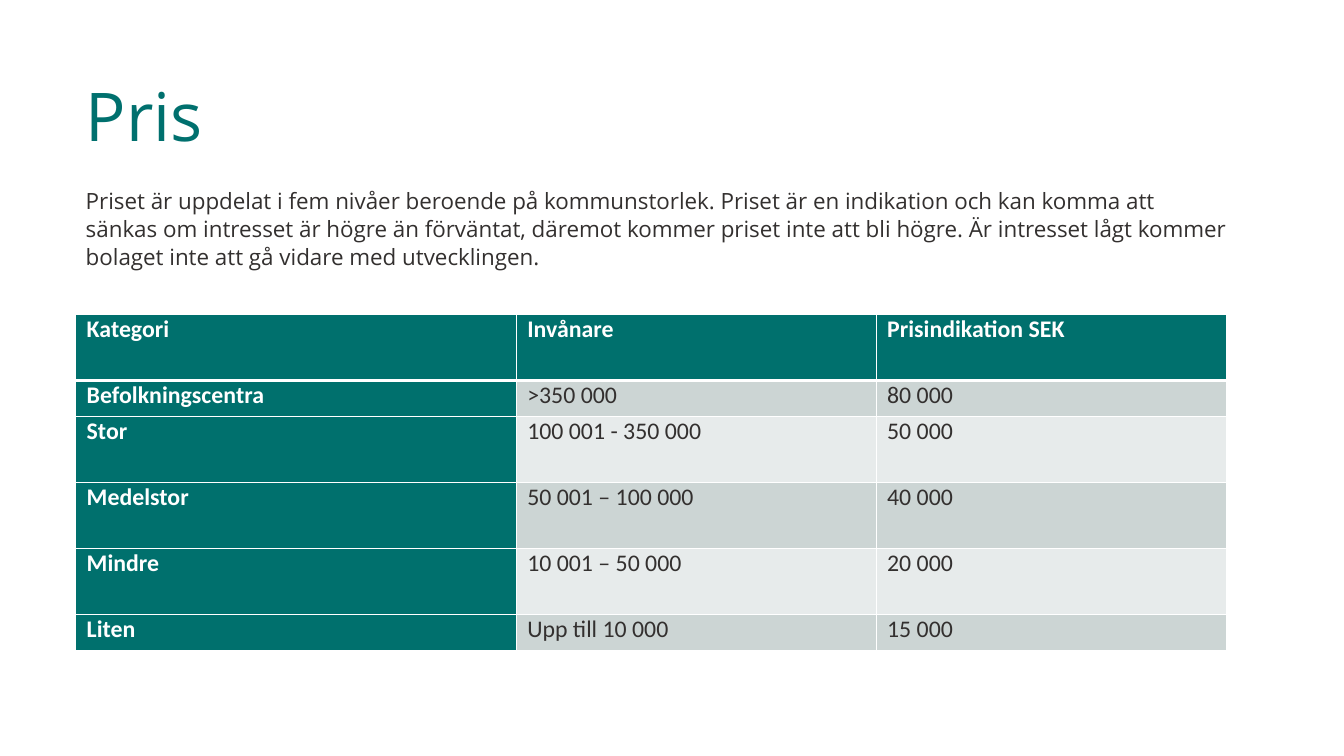
from dataclasses import dataclass

from lxml.etree import SubElement
from pptx import Presentation
from pptx.dml.color import RGBColor
from pptx.enum.text import MSO_ANCHOR, MSO_AUTO_SIZE, PP_ALIGN
from pptx.oxml.ns import qn
from pptx.util import Inches, Length, Pt

TEAL = RGBColor(0x00, 0x70, 0x6E)
TABLE_TEAL = RGBColor(0x00, 0x70, 0x6D)
DARK = RGBColor(0x33, 0x30, 0x2F)
WHITE = RGBColor(0xFF, 0xFF, 0xFF)
BANDS = (RGBColor(0xCC, 0xD5, 0xD4), RGBColor(0xE7, 0xEB, 0xEB))

SLIDE_WIDTH, SLIDE_HEIGHT = Inches(13.33), Inches(7.5)

# Shares of the slide's width and height, in percent
LEFT = 5.63
COLUMN_SHARES = (32.78, 26.78, 26.11)
TALL_ROW, SHORT_ROW = 8.75, 4.75


@dataclass(frozen=True)
class Area:
    left: float
    top: float
    width: float
    height: float

    def lengths(self) -> tuple[Length, ...]:
        return (across(self.left), down(self.top),
                across(self.width), down(self.height))


@dataclass(frozen=True)
class PriceRow:
    category: str
    residents: str
    price: str
    height: float = TALL_ROW

    def texts(self) -> tuple[str, str, str]:
        return self.category, self.residents, self.price


TITLE_AREA = Area(LEFT, 8.93, 88.45, 12.4)
INTRO_AREA = Area(LEFT, 23.87, 86.65, 15.6)
INTRO = (
    "Priset är uppdelat i fem nivåer beroende på kommunstorlek. "
    "Priset är en indikation och kan komma att sänkas om intresset är högre "
    "än förväntat, däremot kommer priset inte att bli högre. "
    "Är intresset lågt kommer bolaget inte att gå vidare med utvecklingen."
)
PRICE_ROWS = (
    PriceRow("Kategori", "Invånare", "Prisindikation SEK"),
    PriceRow("Befolkningscentra", ">350 000", "80 000", SHORT_ROW),
    PriceRow("Stor", "100 001 - 350 000", "50 000"),
    PriceRow("Medelstor", "50 001 – 100 000", "40 000"),
    PriceRow("Mindre", "10 001 – 50 000", "20 000"),
    PriceRow("Liten", "Upp till 10 000", "15 000", SHORT_ROW),
)
TABLE_AREA = Area(LEFT, 41.6, sum(COLUMN_SHARES),
                  sum(row.height for row in PRICE_ROWS))


def across(percent: float) -> Length:
    return Length(round(SLIDE_WIDTH * percent / 100))


def down(percent: float) -> Length:
    return Length(round(SLIDE_HEIGHT * percent / 100))


def set_font(paragraph, name: str, size: int, color: RGBColor,
             bold: bool = False) -> None:
    font = paragraph.font
    font.name, font.size, font.bold = name, Pt(size), bold
    font.color.rgb = color


def fill_placeholder(shape, area: Area, text: str, size: int,
                     color: RGBColor, anchor: MSO_ANCHOR):
    shape.left, shape.top, shape.width, shape.height = area.lengths()
    frame = shape.text_frame
    frame.text = text
    frame.word_wrap = True
    frame.auto_size = MSO_AUTO_SIZE.NONE
    frame.vertical_anchor = anchor
    paragraph = frame.paragraphs[0]
    paragraph.alignment = PP_ALIGN.LEFT
    paragraph.space_before = Pt(0)
    properties = paragraph._p.get_or_add_pPr()
    properties.set("marL", "0")
    properties.set("indent", "0")
    SubElement(properties, qn("a:buNone"))
    set_font(paragraph, "Open Sans", size, color)
    return paragraph


def add_borders(cell, top: int, bottom: int) -> None:
    widths = {"a:lnL": 1, "a:lnR": 1, "a:lnT": top, "a:lnB": bottom}
    properties = cell._tc.get_or_add_tcPr()
    for tag, width in widths.items():
        line = SubElement(properties, qn(tag), w=str(Pt(width)))
        fill = SubElement(line, qn("a:solidFill"))
        SubElement(fill, qn("a:srgbClr"), val=str(WHITE))


def style_cell(cell, text: str, row: int, column: int) -> None:
    is_heading = row == 0 or column == 0
    cell.text = text
    cell.margin_left = cell.margin_right = Inches(0.11)
    cell.margin_top = cell.margin_bottom = 0
    cell.vertical_anchor = MSO_ANCHOR.TOP
    # Borders go before the fill in the cell's properties
    add_borders(cell, top=3 if row == 1 else 1, bottom=3 if row == 0 else 1)
    cell.fill.solid()
    cell.fill.fore_color.rgb = (
        TABLE_TEAL if is_heading else BANDS[(row - 1) % len(BANDS)])
    paragraph = cell.text_frame.paragraphs[0]
    paragraph.space_after = Pt(6)
    set_font(paragraph, "Calibri", 17, WHITE if is_heading else DARK,
             is_heading)


def add_price_table(slide) -> None:
    table = slide.shapes.add_table(
        len(PRICE_ROWS), len(COLUMN_SHARES), *TABLE_AREA.lengths()).table
    table.first_col = True
    table.horz_banding = False
    for column, share in zip(table.columns, COLUMN_SHARES):
        column.width = across(share)
    for row, price_row in enumerate(PRICE_ROWS):
        table.rows[row].height = down(price_row.height)
        for column, text in enumerate(price_row.texts()):
            style_cell(table.cell(row, column), text, row, column)


def main() -> None:
    presentation = Presentation()
    presentation.slide_width = SLIDE_WIDTH
    presentation.slide_height = SLIDE_HEIGHT
    slide = presentation.slides.add_slide(presentation.slide_layouts[1])

    # Title and introduction
    fill_placeholder(slide.shapes.title, TITLE_AREA, "Pris", 48, TEAL,
                     MSO_ANCHOR.MIDDLE)
    intro = fill_placeholder(slide.placeholders[1], INTRO_AREA, INTRO, 16,
                             DARK, MSO_ANCHOR.TOP)
    intro.line_spacing = 1.05

    # Prices by size of municipality
    add_price_table(slide)

    presentation.save("out.pptx")


if __name__ == "__main__":
    main()
